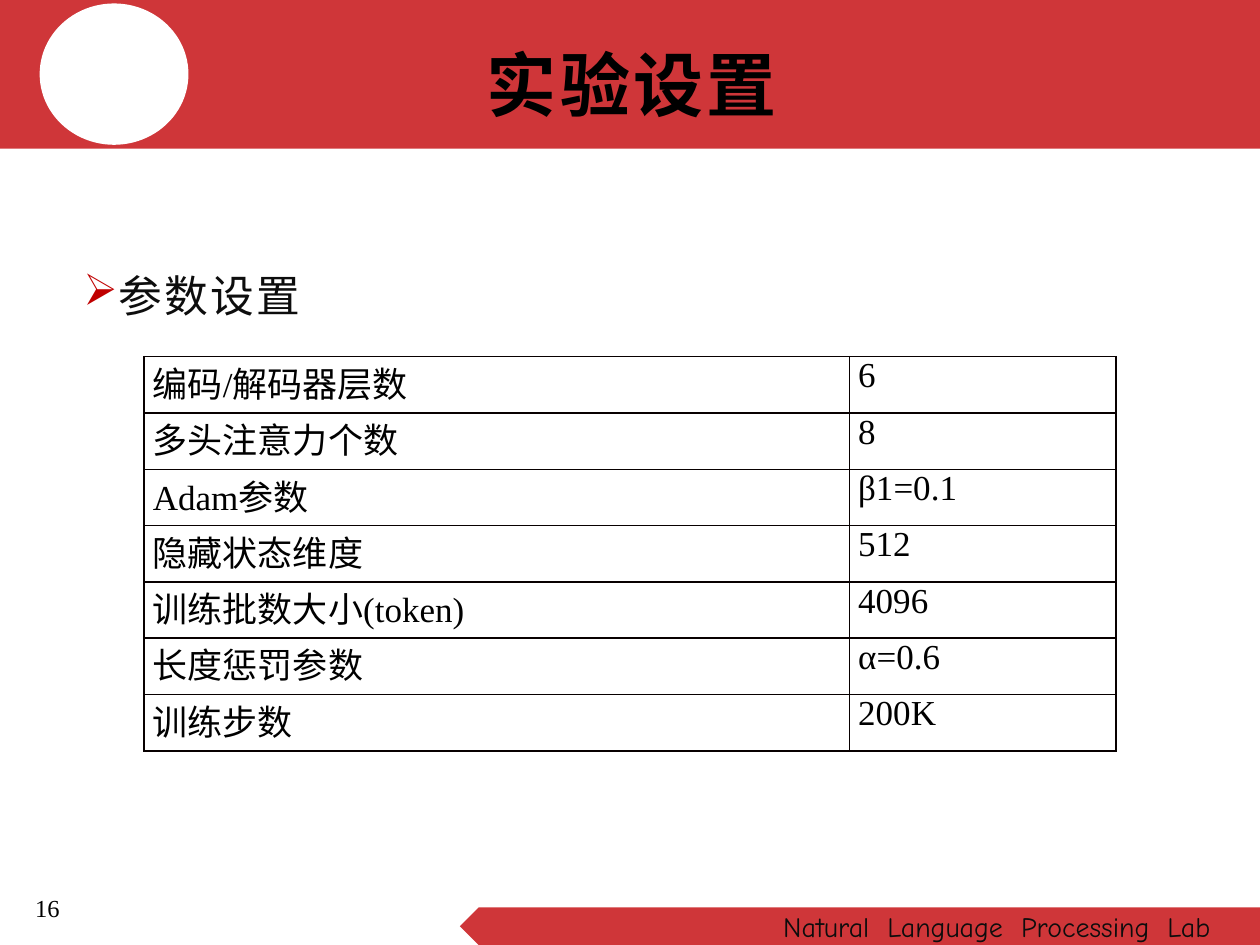
"""Build the experiment settings slide with its parameter table."""
from lxml import etree
from pptx import Presentation
from pptx import util as u
from pptx.dml.color import RGBColor
from pptx.enum import shapes, text
from pptx.oxml.ns import qn

RED, WHITE, BLACK, INK, BULLET_RED, RULE = (
    "CF3639", "FFFFFF", "000000", "0D0D0D", "C00000", "080000")
CJK, SERIF, HAND = "Noto Sans CJK SC", "Times New Roman", "Comic Neue"
SETTINGS = [
    ("编码/解码器层数", "6"),
    ("多头注意力个数", "8"),
    ("Adam参数", "β1=0.1"),
    ("隐藏状态维度", "512"),
    ("训练批数大小(token)", "4096"),
    ("长度惩罚参数", "α=0.6"),
    ("训练步数", "200K"),
]


def rgb(value):
    """Turn a hex string into a colour."""
    return RGBColor.from_string(value)


def cm(*lengths):
    """Turn numbers of centimetres into lengths."""
    return [u.Cm(length) for length in lengths]


def add_band(slide, preset, place, color, rotation=0):
    """Add a plain filled shape without an outline."""
    band = slide.shapes.add_shape(preset, *cm(*place))
    band.shadow.inherit = False
    band.fill.solid()
    band.fill.fore_color.rgb = rgb(color)
    band.line.fill.background()
    band.rotation = rotation


def write(paragraph, words, *, size, font, color=BLACK, bold=False, spacing=0):
    """Append a formatted run to a paragraph."""
    run = paragraph.add_run()
    run.text = words
    run.font.size = u.Pt(size)
    run.font.bold = bold
    run.font.name = font
    run.font.color.rgb = rgb(color)
    properties = run.font._element
    etree.SubElement(properties, qn("a:ea"), typeface=CJK)
    if spacing:
        properties.set("spc", str(int(spacing * 100)))


def add_box(slide, place, insets, anchor=text.MSO_ANCHOR.TOP, wrap=True):
    """Add a text box and return its first paragraph."""
    frame = slide.shapes.add_textbox(*cm(*place)).text_frame
    frame.word_wrap = wrap
    frame.vertical_anchor = anchor
    (frame.margin_left, frame.margin_top,
     frame.margin_right, frame.margin_bottom) = cm(*insets)
    return frame.paragraphs[0]


def add_bullet(paragraph, symbol, color, indent):
    """Give a paragraph a coloured bullet with a hanging indent."""
    properties = paragraph._p.get_or_add_pPr()
    properties.set("marL", str(u.Cm(indent)))
    properties.set("indent", str(-u.Cm(indent)))
    bullet_color = etree.SubElement(properties, qn("a:buClr"))
    etree.SubElement(bullet_color, qn("a:srgbClr"), val=color)
    etree.SubElement(properties, qn("a:buChar"), char=symbol)


def rule_cell(cell, color, width):
    """Draw a border on all four sides of a cell."""
    properties = cell._tc.get_or_add_tcPr()
    for position, side in enumerate(("lnL", "lnR", "lnT", "lnB")):
        border = etree.Element(qn(f"a:{side}"), w=str(u.Pt(width)))
        fill = etree.SubElement(border, qn("a:solidFill"))
        etree.SubElement(fill, qn("a:srgbClr"), val=color)
        properties.insert(position, border)


def add_settings(slide, place, widths):
    """Add the table of parameter names and values."""
    table = slide.shapes.add_table(len(SETTINGS), len(widths), *cm(*place)).table
    table.first_row = table.horz_banding = False
    for column, width in zip(table.columns, widths):
        column.width = u.Cm(width)
    for row, entries in enumerate(SETTINGS):
        for column, words in enumerate(entries):
            cell = table.cell(row, column)
            cell.margin_left = cell.margin_right = u.Cm(0.18)
            cell.margin_top = cell.margin_bottom = 0
            cell.fill.background()
            rule_cell(cell, RULE, 1)
            write(cell.text_frame.paragraphs[0], words, size=20, font=SERIF)


def add_footer(slide):
    """Add the lab name with widened gaps between its words."""
    lab = add_box(slide, (15.29, 18.29, 10.01, 0.76), (0.5, 0, 0.25, 0),
                  text.MSO_ANCHOR.MIDDLE)
    style = {"size": 16, "font": HAND, "color": INK}
    first, *others = "Natural Language Processing Lab".split()
    write(lab, first, **style)
    for word in others:
        write(lab, " ", spacing=5, **style)
        write(lab, word, **style)


def main():
    """Build and save the slide."""
    deck = Presentation()
    deck.slide_width, deck.slide_height = cm(25.4, 19.05)
    slide = deck.slides.add_slide(deck.slide_layouts[6])

    preset = shapes.MSO_SHAPE
    add_band(slide, preset.RECTANGLE, (0, 0, 25.4, 3), RED)
    add_band(slide, preset.PENTAGON, (9.27, 18.29, 16.13, 0.76), RED, rotation=180)
    add_band(slide, preset.OVAL, (0.8, 0.07, 3, 2.85), WHITE)
    add_footer(slide)

    title = add_box(slide, (7.24, 0.79, 10.92, 1.8), (0.28, 0.1, 0.2, 0.1),
                    text.MSO_ANCHOR.MIDDLE)
    title.alignment = text.PP_ALIGN.CENTER
    write(title, "实验设置", size=40, font=CJK, bold=True, spacing=2)

    number = add_box(slide, (0.46, 17.88, 1.17, 0.86), (0.25, 0.13, 0.25, 0.13),
                     wrap=False)
    write(number, "16", size=14, font=SERIF)

    heading = add_box(slide, (1.4, 5.11, 23.04, 12.78), (0.28, 0, 0.23, 0))
    add_bullet(heading, "➢", BULLET_RED, 0.64)
    heading.line_spacing = 1.3
    heading.space_after = u.Pt(8)
    write(heading, "参数设置", size=25, font=CJK, color=INK, spacing=1.5)

    add_settings(slide, (2.9, 7.19, 19.6, 7.95), (14.22, 5.38))
    deck.save("out.pptx")


if __name__ == "__main__":
    main()
